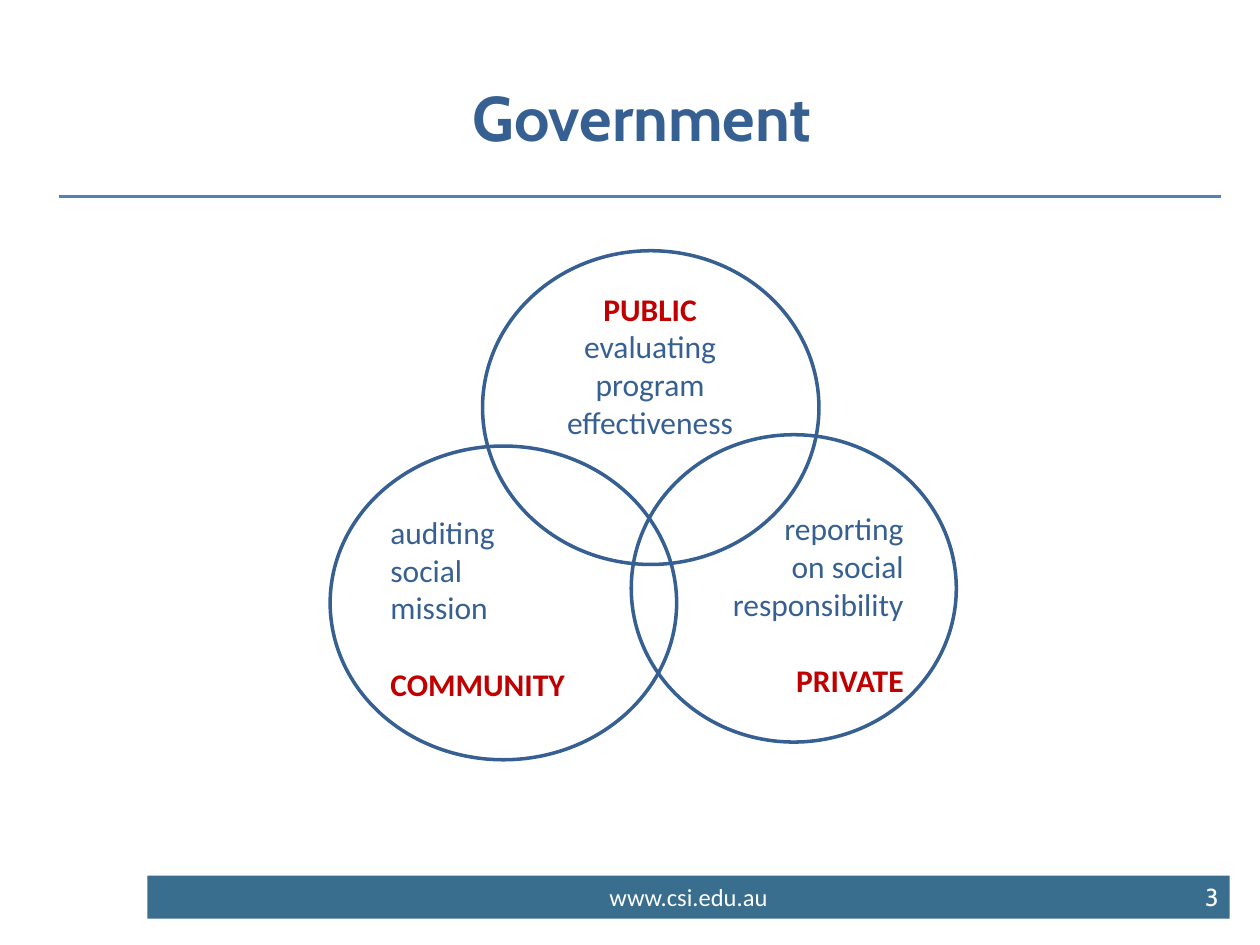
from lxml import etree
from pptx import Presentation, util as u
from pptx.dml.color import RGBColor
from pptx.enum import shapes, text
from pptx.oxml.ns import qn

COLORS = {"navy": "376092", "red": "C00000", "rule": "4F81BD",
          "bar": "3A6E8F", "white": "FFFFFF"}
WIDTH, HEIGHT = u.Inches(10), u.Inches(7.5)
LEFT, CENTER, RIGHT = text.PP_ALIGN.LEFT, text.PP_ALIGN.CENTER, text.PP_ALIGN.RIGHT
BODY = {"name": "Calibri", "size": u.Pt(18), "bold": False}
HEADING = {**BODY, "bold": True}
SMALL = {**BODY, "size": u.Pt(14)}
NUMBER = {**SMALL, "name": "Cabin"}
TITLE = {"name": "Cabin", "size": u.Pt(36), "bold": True}
BLANK_LINE = u.Pt(22)


def across(percent):
    return round(WIDTH * percent / 100)


def down(percent):
    return round(HEIGHT * percent / 100)


def place(x, y, w, h):
    return across(x), down(y), across(w), down(h)


def rgb(name):
    return RGBColor.from_string(COLORS[name])


def set_line(line, color):
    line.color.rgb = rgb(color)
    line.width = u.Pt(2)


def write(sp, paragraphs, align, anchor=text.MSO_ANCHOR.TOP):
    tf = sp.text_frame
    tf.word_wrap = True
    tf.vertical_anchor = anchor
    for i, (words, fmt, color, before) in enumerate(paragraphs):
        p = tf.add_paragraph() if i else tf.paragraphs[0]
        p.alignment = align
        if before:
            p.space_before = before
        r = p.add_run()
        r.text = words
        for key, value in fmt.items():
            setattr(r.font, key, value)
        r.font.color.rgb = rgb(color)


def add_text(s, box, paragraphs, align, **kwargs):
    write(s.shapes.add_textbox(*place(*box)), paragraphs, align, **kwargs)


def add_circle(s, box):
    sp = s.shapes.add_shape(shapes.MSO_SHAPE.OVAL, *place(*box))
    sp.shadow.inherit = False
    sp.fill.background()
    set_line(sp.line, "navy")


def add_rule(s, x1, x2, y):
    line = s.shapes.add_connector(shapes.MSO_CONNECTOR.STRAIGHT,
                                  across(x1), down(y), across(x2), down(y))
    set_line(line.line, "rule")
    etree.SubElement(line._element.spPr, qn("a:effectLst"))


def add_footer(s, y, h):
    bar = s.shapes.add_shape(shapes.MSO_SHAPE.RECTANGLE, *place(11.7, y, 85.9, h))
    bar.shadow.inherit = False
    bar.fill.solid()
    bar.fill.fore_color.rgb = rgb("bar")
    bar.line.fill.background()
    write(bar, [("www.csi.edu.au", SMALL, "white", 0)], CENTER)
    add_text(s, (92.2, y, 5.5, h), [("3", NUMBER, "white", 0)], RIGHT)


def sector(lines, heading):
    body = [(line, BODY, "navy", 0) for line in lines]
    return body + [(heading, HEADING, "red", BLANK_LINE)]


def main():
    prs = Presentation()
    prs.slide_width, prs.slide_height = WIDTH, HEIGHT
    s = prs.slides.add_slide(prs.slide_layouts[6])

    add_footer(s, 92.67, 4.53)
    add_rule(s, 4.7, 96.9, 20.8)
    add_text(s, (5, 4, 91.9, 16.67), [("Government", TITLE, "navy", 0)],
             CENTER, anchor=text.MSO_ANCHOR.MIDDLE)

    for box in ((38.3, 26.53, 26.7, 33.2), (26.2, 47.2, 27.5, 33.2),
                (50.1, 46, 25.8, 32.53)):
        add_circle(s, box)

    add_text(s, (30, 53.6, 17.5, 21.6),
             sector(("auditing", "social", "mission"), "COMMUNITY"), LEFT)
    add_text(s, (55.9, 53.2, 16.8, 21.6),
             sector(("reporting", "on social", "responsibility"), "PRIVATE"), RIGHT)
    add_text(s, (42.3, 30, 18.6, 17.47),
             [("PUBLIC", HEADING, "red", 0),
              ("evaluating program effectiveness", BODY, "navy", 0)], CENTER)

    prs.save("out.pptx")


if __name__ == "__main__":
    main()
